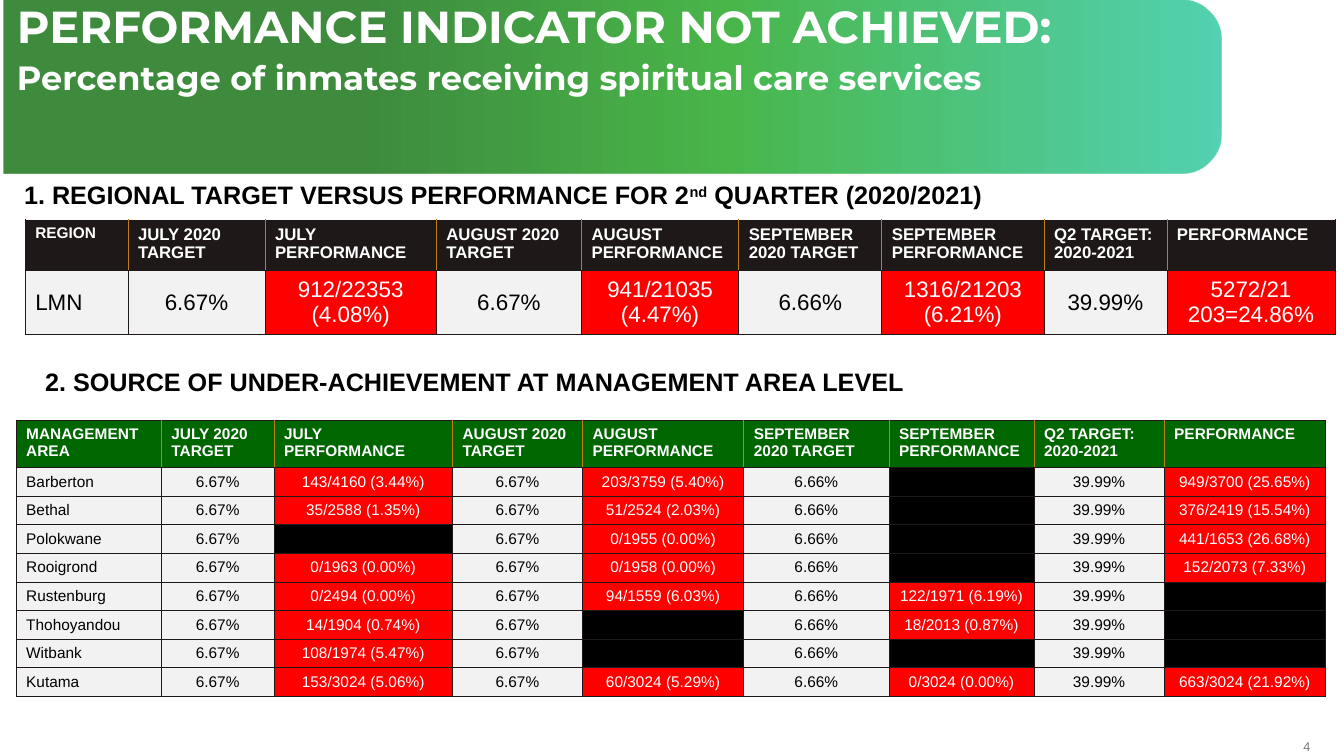
from lxml import etree
from pptx import Presentation
from pptx.dml.color import RGBColor
from pptx.enum.shapes import MSO_SHAPE
from pptx.enum.text import MSO_ANCHOR, PP_ALIGN
from pptx.oxml import parse_xml
from pptx.oxml.ns import nsdecls, qn
from pptx.util import Pt

BANNER_SHAPE = MSO_SHAPE.ROUND_2_SAME_RECTANGLE
TOP, MIDDLE = MSO_ANCHOR.TOP, MSO_ANCHOR.MIDDLE
LEFT, CENTER, RIGHT = PP_ALIGN.LEFT, PP_ALIGN.CENTER, PP_ALIGN.RIGHT

WHITE, BLACK, INK, GREY = "FFFFFF", "000000", "1E1918", "77787B"
GREEN, RED, PALE, AMBER = "006600", "FF0000", "F2F2F2", "BF7B17"
BANNER_STOPS = [(30, GREEN, 75), (59, "009900", 71), (100, "00BC8D", 67)]

MONTH_HEADERS = ["JULY 2020\vTARGET", "JULY PERFORMANCE",
                 "AUGUST 2020\vTARGET", "AUGUST PERFORMANCE",
                 "SEPTEMBER 2020 TARGET", "SEPTEMBER PERFORMANCE",
                 "Q2 TARGET: 2020-2021", "PERFORMANCE"]
TARGETS = ["6.67%", "6.67%", "6.66%", "39.99%"]

# Name, then July, August, September and quarter performance
REGIONS = [("LMN", "912/22353\n(4.08%)", "941/21035\n(4.47%)",
            "1316/21203\n(6.21%)", "5272/21 203=24.86%")]
AREAS = [
    ("Barberton", "143/4160 (3.44%)", "203/3759 (5.40%)", "", "949/3700 (25.65%)"),
    ("Bethal", "35/2588 (1.35%)", "51/2524 (2.03%)", "", "376/2419 (15.54%)"),
    ("Polokwane", "", "0/1955 (0.00%)", "", "441/1653 (26.68%)"),
    ("Rooigrond", "0/1963 (0.00%)", "0/1958 (0.00%)", "", "152/2073 (7.33%)"),
    ("Rustenburg", "0/2494 (0.00%)", "94/1559 (6.03%)", "122/1971 (6.19%)", ""),
    ("Thohoyandou", "14/1904 (0.74%)", "", "18/2013 (0.87%)", ""),
    ("Witbank", "108/1974 (5.47%)", "", "", ""),
    ("Kutama", "153/3024 (5.06%)", "60/3024 (5.29%)", "0/3024 (0.00%)",
     "663/3024 (21.92%)"),
]
REGION_WIDTHS = [73.4, 97.9, 122.4, 103.7, 112.3, 102.2, 115.9, 87.8, 120.2]
AREA_WIDTHS = [103.7, 80.6, 127.4, 92.9, 115.2, 103.7, 103.7, 92.9, 115.2]


def rgb(color):
    return RGBColor.from_string(color)


def apply(target, formats):
    for attribute, value in formats.items():
        setattr(target, attribute, value)


def style_run(run, size, color, bold=False, font="Arial"):
    apply(run.font, {"name": font, "size": Pt(size), "bold": bold})
    run.font.color.rgb = rgb(color)


def add_text(slide, box, **frame_formats):
    """Add a wrapping text box and return its text frame."""
    frame = slide.shapes.add_textbox(*map(Pt, box)).text_frame
    apply(frame, {"word_wrap": True, **frame_formats})
    return frame


def add_banner(slide, left, top, width, height):
    """Green band, rounded at its right end: an upright shape turned by 90 degrees."""
    band = slide.shapes.add_shape(
        BANNER_SHAPE, Pt(left + (width - height) / 2), Pt(top + (height - width) / 2),
        Pt(height), Pt(width))
    band.rotation = 90
    band.adjustments[0], band.adjustments[1] = 0.233, 0
    band.shadow.inherit = False
    band.line.fill.background()
    stops = "".join(
        f'<a:gs pos="{place * 1000}"><a:srgbClr val="{color}">'
        f'<a:alpha val="{alpha * 1000}"/></a:srgbClr></a:gs>'
        for place, color, alpha in BANNER_STOPS)
    gradient = parse_xml(
        f'<a:gradFill {nsdecls("a")} rotWithShape="1"><a:gsLst>{stops}</a:gsLst>'
        '<a:lin ang="16200000" scaled="0"/></a:gradFill>')
    band._element.spPr.find(qn("a:prstGeom")).addnext(gradient)

    title = add_text(slide, (left + 2.5, 0, width - 7.2, 41))
    lines = [("PERFORMANCE INDICATOR NOT ACHIEVED:", 32),
             ("Percentage of inmates receiving spiritual care services", 24)]
    for index, (line, size) in enumerate(lines):
        paragraph = title.add_paragraph() if index else title.paragraphs[0]
        apply(paragraph, {"text": line, "line_spacing": 0.9, "space_after": Pt(6)})
        style_run(paragraph.runs[0], size, WHITE, True, "Montserrat")


def add_heading(slide, box, parts, indent=7.2):
    """Section heading from (text, is superscript) parts."""
    paragraph = add_text(slide, box, margin_left=Pt(indent)).paragraphs[0]
    for text, raised in parts:
        run = paragraph.add_run()
        run.text = text
        style_run(run, 18, BLACK, True)
        if raised:
            run.font._element.set("baseline", "30000")


def set_borders(cell, sides):
    """Draw the four borders, given in the order left, right, top, bottom."""
    for index, (side, color) in enumerate(zip("LRTB", sides)):
        line = parse_xml(
            f'<a:ln{side} {nsdecls("a")} w="6350"><a:solidFill>'
            f'<a:srgbClr val="{color}"/></a:solidFill></a:ln{side}>')
        cell._tc.get_or_add_tcPr().insert(index, line)


def fill_cell(cell, text, fill, color, size, bold, align, anchor, sides):
    cell.fill.solid()
    cell.fill.fore_color.rgb = rgb(fill)
    cell.vertical_anchor = anchor
    cell.text_frame.text = text
    for paragraph in cell.text_frame.paragraphs:
        paragraph.alignment = align
        for run in paragraph.runs:
            style_run(run, size, color, bold)
        sized = {"sz": str(size * 100)}
        for line_break in paragraph._p.findall(qn("a:br")):
            etree.SubElement(line_break, qn("a:rPr"), sized)
        if not text:
            etree.SubElement(paragraph._p, qn("a:endParaRPr"), sized)
    set_borders(cell, sides)


def add_performance_table(slide, left, top, widths, heights, name_header, records,
                          header_fill, header_sizes, body_size):
    """Targets alternate with missed results; a result without a value is black."""
    columns = len(widths)
    table = slide.shapes.add_table(
        len(records) + 1, columns, Pt(left), Pt(top),
        Pt(sum(widths)), Pt(heights[0] + heights[1] * len(records))).table
    apply(table, {"first_row": False, "horz_banding": False})
    for column, width in zip(table.columns, widths):
        column.width = Pt(width)
    for index, row in enumerate(table.rows):
        row.height = Pt(heights[min(index, 1)])

    for index, header in enumerate([name_header] + MONTH_HEADERS):
        sides = (AMBER if index else INK, AMBER if index < columns - 1 else INK, INK, INK)
        fill_cell(table.cell(0, index), header, header_fill, WHITE,
                  header_sizes[min(index, 1)], True, LEFT, TOP, sides)

    for row, (name, *results) in enumerate(records, 1):
        values = [name]
        for target, result in zip(TARGETS, results):
            values += [target, result]
        for index, value in enumerate(values):
            is_result = index > 0 and index % 2 == 0
            fill = (RED if value else BLACK) if is_result else PALE
            fill_cell(table.cell(row, index), value, fill, WHITE if is_result else BLACK,
                      body_size, False, CENTER if index else LEFT, MIDDLE, [INK] * 4)


def add_page_number(slide, box, number):
    frame = add_text(slide, box, vertical_anchor=MIDDLE, margin_left=0, margin_right=0,
                     margin_top=0, margin_bottom=0)
    paragraph = frame.paragraphs[0]
    apply(paragraph, {"text": number, "alignment": RIGHT})
    style_run(paragraph.runs[0], 9, GREY)


def main():
    deck = Presentation()
    apply(deck, {"slide_width": Pt(960), "slide_height": Pt(540)})
    slide = deck.slides.add_slide(deck.slide_layouts[6])

    add_page_number(slide, (907.9, 527.8, 28.1, 10.8), "4")
    add_banner(slide, 2.5, -0.4, 869.8, 124.6)
    add_heading(slide, (10.1, 124.6, 702.7, 28.8),
                [("1. REGIONAL TARGET VERSUS PERFORMANCE FOR 2", False), ("nd", True),
                 (" QUARTER (2020/2021)", False)])
    add_heading(slide, (0, 257.8, 720, 28.8),
                [("2. SOURCE OF UNDER-ACHIEVEMENT AT MANAGEMENT AREA LEVEL", False)],
                indent=32.2)
    add_performance_table(slide, 18, 157, REGION_WIDTHS, (36.4, 45.2), "REGION", REGIONS,
                          INK, (11, 12), 16)
    add_performance_table(slide, 11.5, 300.2, AREA_WIDTHS, (33.4, 20.4),
                          "MANAGEMENT AREA", AREAS, GREEN, (11, 11), 11)
    deck.save("out.pptx")


if __name__ == "__main__":
    main()
